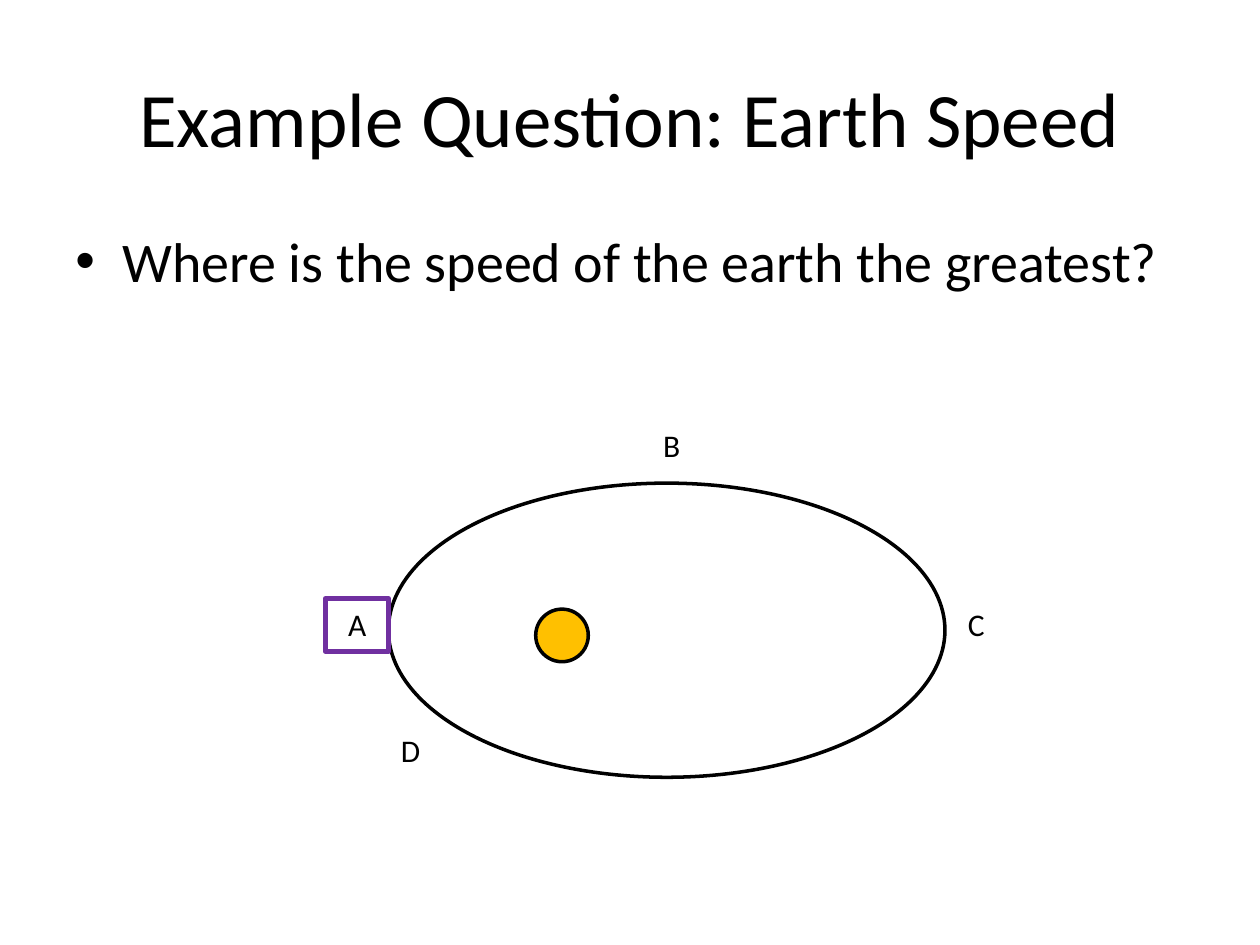
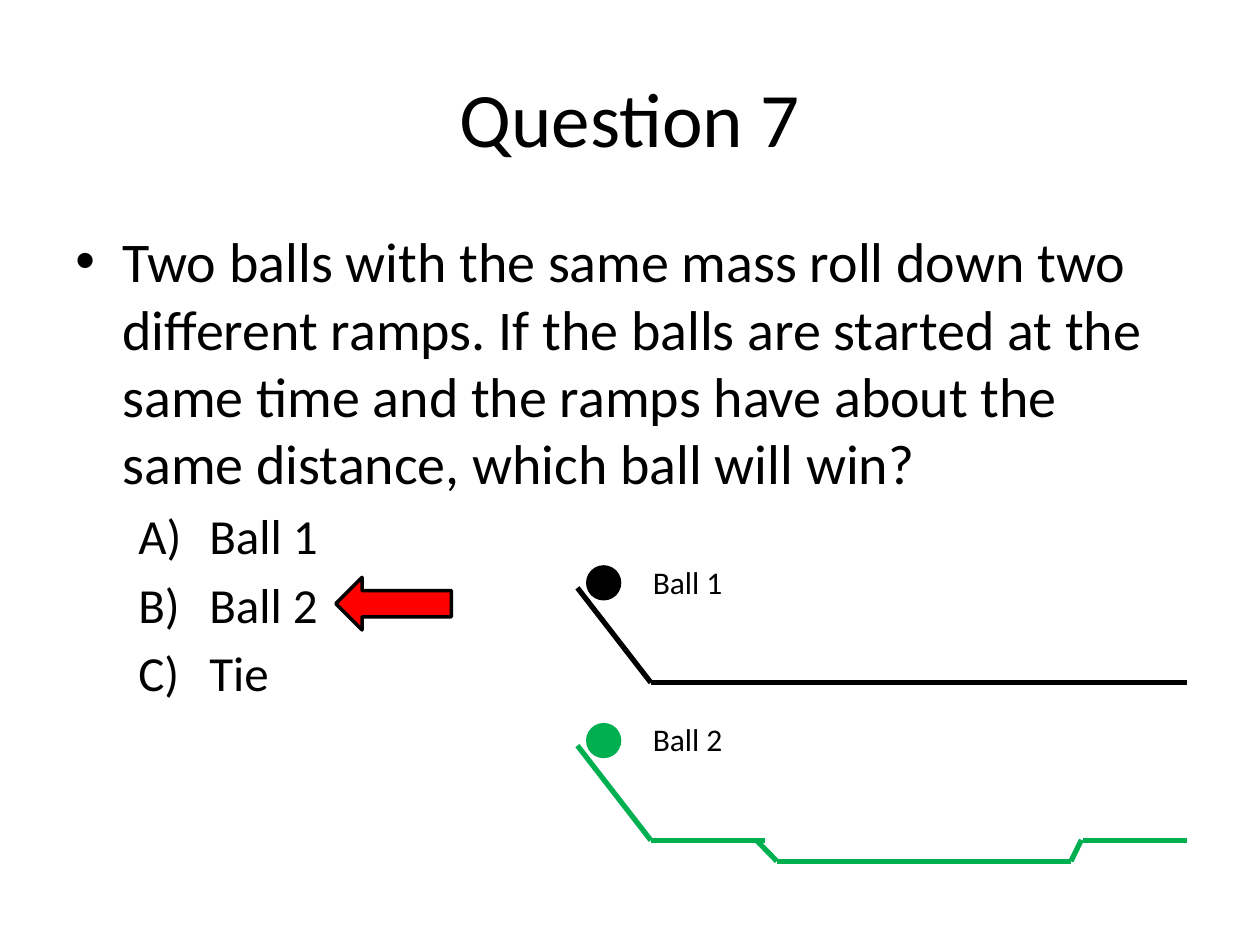
"""Build two physics quiz slides: orbital speed and racing balls."""
from lxml import etree
from pptx import Presentation
from pptx.dml.color import RGBColor
from pptx.enum.shapes import MSO_CONNECTOR, MSO_SHAPE
from pptx.enum.text import MSO_ANCHOR, MSO_AUTO_SIZE, PP_ALIGN
from pptx.oxml.ns import qn
from pptx.util import Cm, Pt

OVAL, RECTANGLE, LEFT_ARROW = MSO_SHAPE.OVAL, MSO_SHAPE.RECTANGLE, MSO_SHAPE.LEFT_ARROW
STRAIGHT = MSO_CONNECTOR.STRAIGHT
MIDDLE, TOP = MSO_ANCHOR.MIDDLE, MSO_ANCHOR.TOP
CENTER, LEFT = PP_ALIGN.CENTER, PP_ALIGN.LEFT
GROW = MSO_AUTO_SIZE.SHAPE_TO_FIT_TEXT

FONT = "Calibri"
COLORS = {
    "black": "000000", "white": "FFFFFF", "sun": "FFC000",
    "purple": "7030A0", "green": "00B050", "red": "FF0000",
}
TITLE_AREA = (1.27, 0.76, 22.86, 3.18)
BODY_AREA = (1.27, 4.45, 22.86, 12.57)
LABEL_HEIGHT = 1.03

ORBIT = {
    "title": "Example Question: Earth Speed",
    "question": "Where is the speed of the earth the greatest?",
    "answers": [],
    "labels": [("D", 7.83, 14.61), ("A", 6.77, 12.07), ("C", 19.26, 12.07), ("B", 13.12, 8.47)],
}
RACE = {
    "title": "Question 7",
    "question": "Two balls with the same mass roll down two different ramps. "
                "If the balls are started at the same time and the ramps have about "
                "the same distance, which ball will win?",
    "answers": ["Ball 1", "Ball 2", "Tie"],
    "ramps": [("Ball 1", "black"), ("Ball 2", "green")],
}
RAMP_TOP, RAMP_STEP = 11.85, 3.18
RAMP_POINTS = [(11.64, 0), (13.12, 1.91), (23.92, 1.91)]
DIP_LINES = [
    ((21.59, 17.36), (21.8, 16.93)),
    ((15.24, 16.93), (15.66, 17.36)),
]


def color(name):
    return RGBColor.from_string(COLORS[name])


def add_text(page, paragraphs, area, anchor=TOP, align=LEFT, wrap=True):
    box = page.shapes.add_textbox(*map(Cm, area))
    frame = box.text_frame
    frame.word_wrap = wrap
    frame.vertical_anchor = anchor
    if not wrap:
        frame.auto_size = GROW
    for index, (text, size, bullet) in enumerate(paragraphs):
        para = frame.paragraphs[0] if index == 0 else frame.add_paragraph()
        para.alignment = align
        span = para.add_run()
        span.text = text
        span.font.name = FONT
        span.font.size = Pt(size)
        span.font.color.rgb = color("black")
        if bullet:
            add_bullet(para, bullet)
            para.space_before = Pt(size * 0.2)


def add_bullet(para, bullet):
    margin, hanging = (0.95, 0.95) if bullet == "dot" else (2.7, 1.43)
    properties = para._p.get_or_add_pPr()
    properties.set("marL", str(Cm(margin)))
    properties.set("indent", str(-Cm(hanging)))
    if bullet == "dot":
        etree.SubElement(properties, qn("a:buFont")).set("typeface", "Arial")
        etree.SubElement(properties, qn("a:buChar")).set("char", "•")
    else:
        para.level = 1
        etree.SubElement(properties, qn("a:buFont")).set("typeface", "+mj-lt")
        etree.SubElement(properties, qn("a:buAutoNum")).set("type", "alphaUcParenR")


def add_label(page, text, left, top, width=0.89):
    add_text(page, [(text, 18, None)], (left, top, width, LABEL_HEIGHT), wrap=False)


def add_figure(page, kind, area, fill=None, line="black", weight=2):
    shape = page.shapes.add_shape(kind, *map(Cm, area))
    shape.shadow.inherit = False
    if fill:
        shape.fill.solid()
        shape.fill.fore_color.rgb = color(fill)
    else:
        shape.fill.background()
    shape.line.color.rgb = color(line)
    shape.line.width = Pt(weight)


def add_line(page, start, end, line):
    connector = page.shapes.add_connector(STRAIGHT, *map(Cm, start + end))
    connector.line.color.rgb = color(line)
    connector.line.width = Pt(3)
    etree.SubElement(connector._element.spPr, qn("a:effectLst"))


def add_page(deck, content):
    page = deck.slides.add_slide(deck.slide_layouts[6])
    add_text(page, [(content["title"], 44, None)], TITLE_AREA, anchor=MIDDLE, align=CENTER)
    answers = [(answer, 28, "letter") for answer in content["answers"]]
    add_text(page, [(content["question"], 32, "dot")] + answers, BODY_AREA)
    return page


def draw_orbit(page):
    add_figure(page, OVAL, (7.83, 9.74, 11.22, 5.93))
    add_figure(page, OVAL, (10.8, 12.28, 1.06, 1.06), fill="sun")
    for label in ORBIT["labels"]:
        add_label(page, *label)
    add_figure(page, RECTANGLE, (6.56, 12.07, 1.27, 1.06), line="purple", weight=3)


def draw_race(page):
    for index, (name, tint) in enumerate(RACE["ramps"]):
        top = RAMP_TOP + index * RAMP_STEP
        points = [(x, top + y) for x, y in RAMP_POINTS]
        for start, end in zip(points, points[1:]):
            add_line(page, start, end, tint)
        add_figure(page, OVAL, (11.85, top - 0.42, 0.64, 0.64), fill=tint, line=tint)
        add_label(page, name, 12.91, top - 0.63, width=1.93)
    add_line(page, (15.66, 17.36), (21.59, 17.36), "green")
    add_figure(page, RECTANGLE, (15.45, 16.72, 6.35, 0.42), fill="white", line="white")
    for start, end in DIP_LINES:
        add_line(page, start, end, "green")
    add_figure(page, LEFT_ARROW, (6.77, 11.64, 2.33, 1.06), fill="red")


def main():
    deck = Presentation()
    deck.slide_width, deck.slide_height = Cm(25.4), Cm(19.05)
    draw_orbit(add_page(deck, ORBIT))
    draw_race(add_page(deck, RACE))
    deck.save("out.pptx")


if __name__ == "__main__":
    main()
